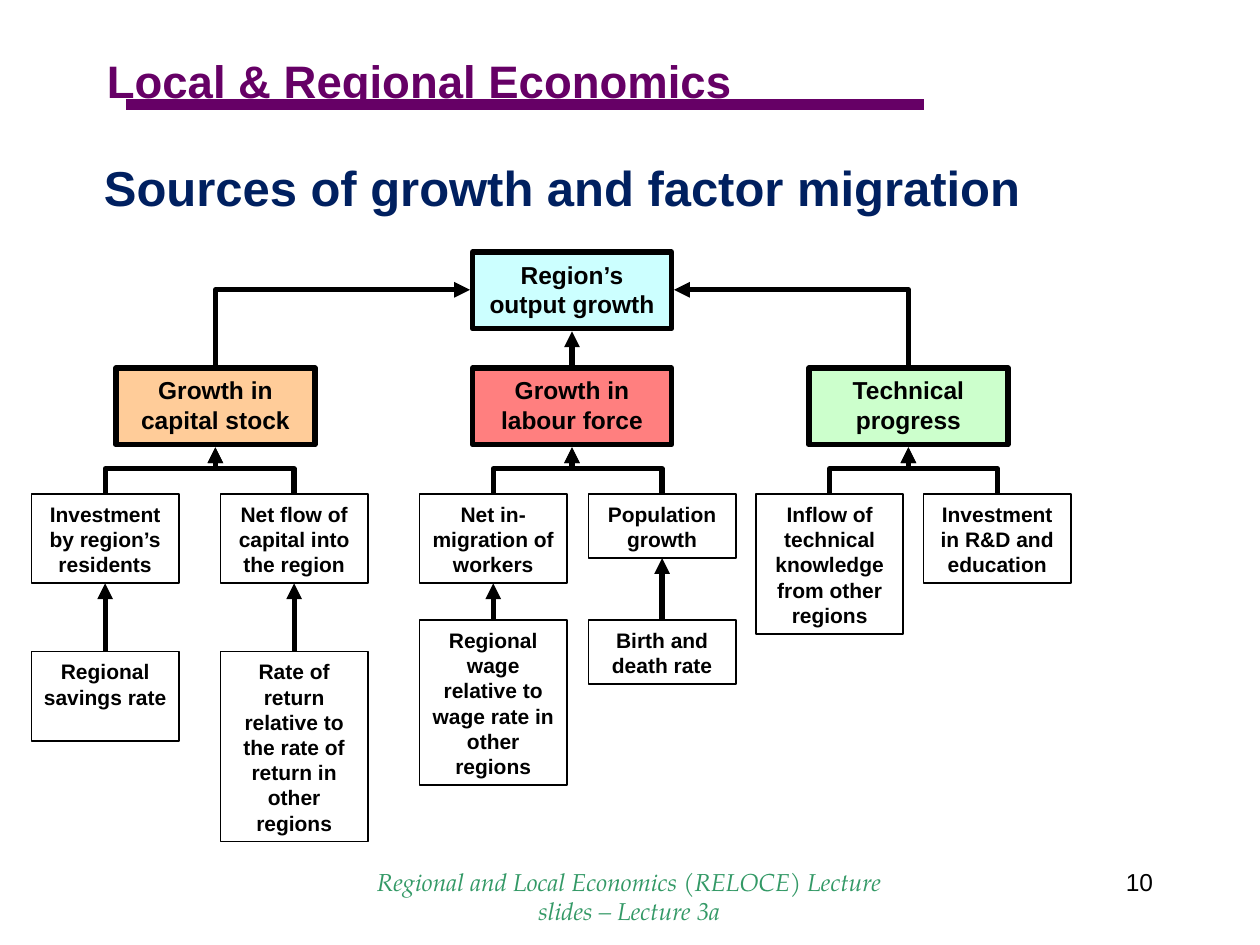
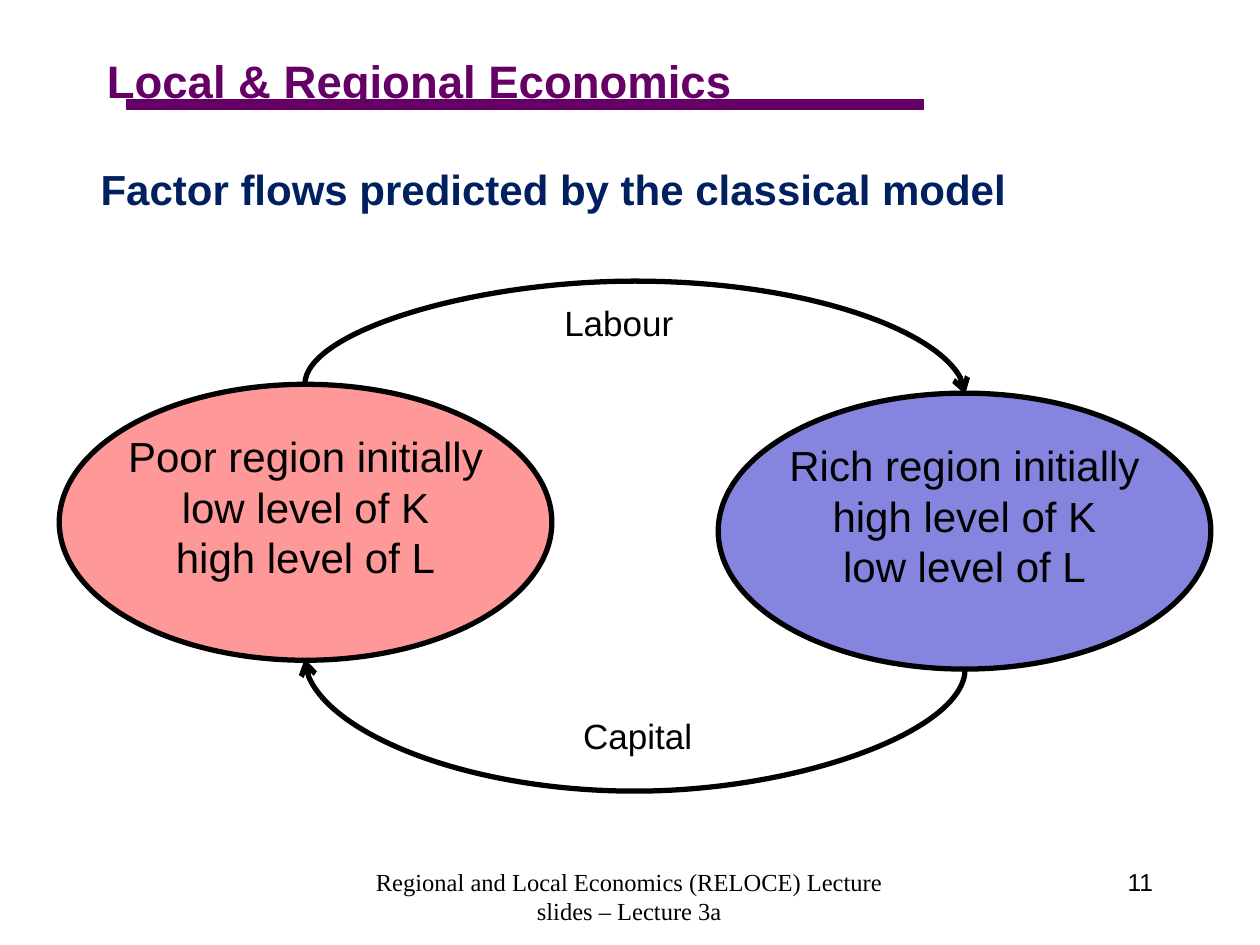
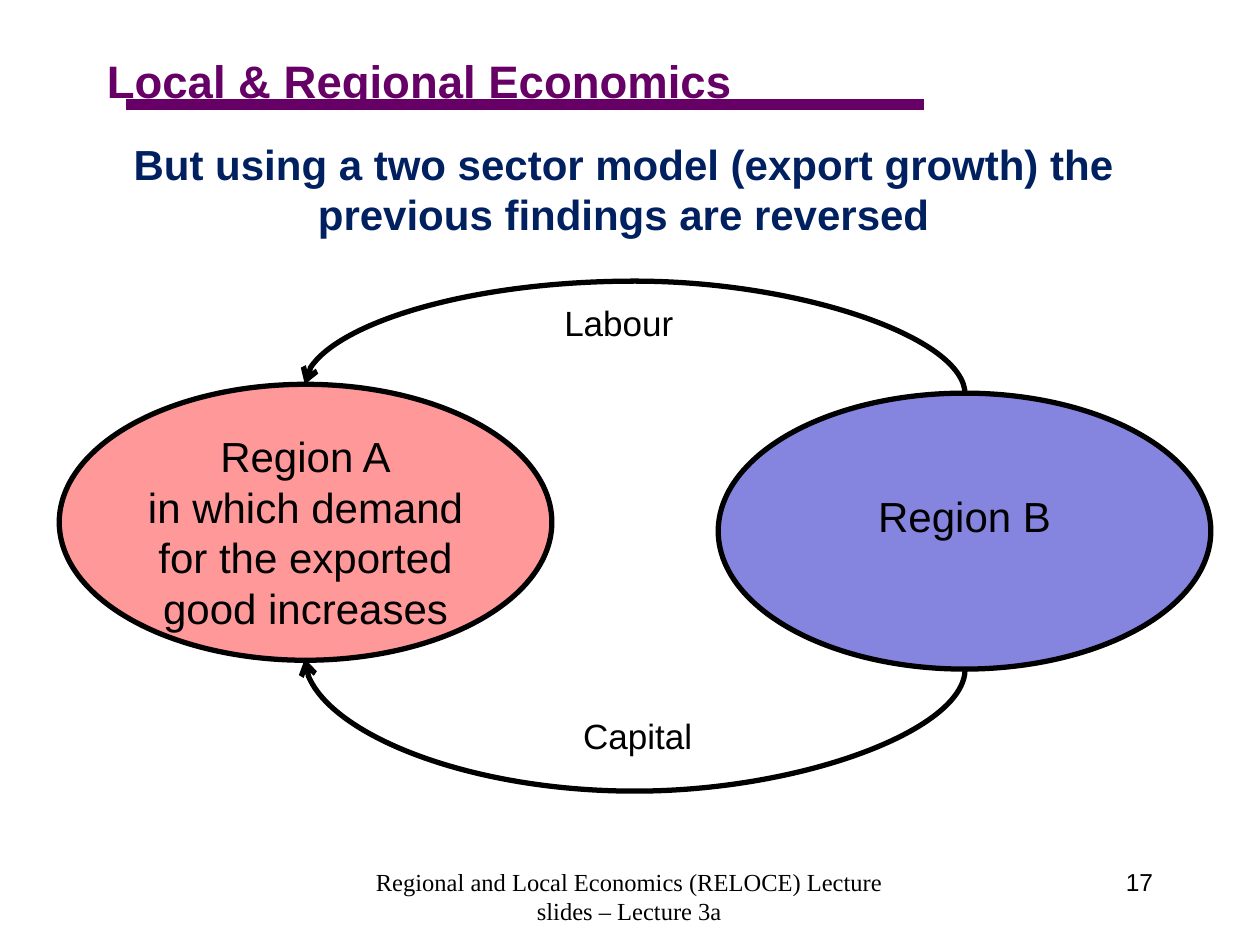
from dataclasses import dataclass

from lxml import etree
from pptx import Presentation
from pptx.dml.color import RGBColor
from pptx.enum import shapes, text
from pptx.oxml import ns
from pptx.util import Inches, Pt

SHAPE = shapes.MSO_SHAPE
CONNECTOR = shapes.MSO_CONNECTOR
ALIGN = text.PP_ALIGN
ANCHOR = text.MSO_ANCHOR


@dataclass(frozen=True)
class Theme:
    font: str = "Arial"
    ink: str = "000000"
    white: str = "FFFFFF"
    brand: str = "660066"
    title: str = "002060"
    output: str = "CCFFFF"
    capital: str = "FFCC99"
    labour: str = "FF0000"
    progress: str = "CCFFCC"
    left_region: str = "FF9999"
    right_region: str = "8585E0"
    footer_green: str = "339966"
    header_size: int = 26
    large_title_size: int = 28
    title_size: int = 24
    region_size: int = 24
    flow_size: int = 20
    factor_size: int = 14
    footer_size: int = 14
    cause_size: int = 12
    thin: int = 1
    thick: int = 3
    rule: int = 6


THEME = Theme()


def add_xml(parent, tag, **attributes):
    return etree.SubElement(parent, ns.qn(tag), attributes)


class Deck:
    def __init__(self, theme):
        self.theme = theme
        self.presentation = Presentation()
        self.presentation.slide_width = Inches(10)
        self.presentation.slide_height = Inches(7.5)
        self.slide = None

    def new_slide(self, number, footer_font=None, footer_color=None, italic=False):
        theme = self.theme
        self.slide = self.presentation.slides.add_slide(self.presentation.slide_layouts[6])
        self.text(0.75, 0.37, 6.67, 0.53, "Local & Regional Economics",
                  theme.header_size, theme.brand, bold=True)
        self.arrow((1, 0.83), (7.33, 0.83), theme.brand, theme.rule, end=None)
        self.text(2.83, 6.83, 4.33, 0.5,
                  "Regional and Local Economics (RELOCE) Lecture slides – Lecture 3a",
                  theme.footer_size, footer_color, ALIGN.CENTER,
                  font=footer_font, italic=italic)
        self.text(7.17, 6.83, 2.08, 0.5, str(number), theme.footer_size, align=ALIGN.RIGHT)

    def set_text(self, frame, wording, size, color=None, align=ALIGN.LEFT, bold=False,
                 italic=False, font=None, wrap=True, anchor=ANCHOR.TOP, top_inset=0.05):
        frame.word_wrap = wrap
        frame.vertical_anchor = anchor
        frame.margin_left = frame.margin_right = Inches(0.1)
        frame.margin_top, frame.margin_bottom = Inches(top_inset), Inches(0.05)
        frame.text = wording
        for paragraph in frame.paragraphs:
            paragraph.alignment = align
            for run in paragraph.runs:
                run.font.name = font or self.theme.font
                run.font.size = Pt(size)
                run.font.bold = bold
                run.font.italic = italic
                run.font.color.rgb = RGBColor.from_string(color or self.theme.ink)

    def text(self, left, top, width, height, wording, size, color=None,
             align=ALIGN.LEFT, **style):
        box = self.slide.shapes.add_textbox(*map(Inches, (left, top, width, height)))
        self.set_text(box.text_frame, wording, size, color, align, **style)

    def title(self, wording, align=ALIGN.LEFT):
        self.text(0.7, 1.17, 8.5, 0.65, wording, self.theme.title_size, self.theme.title,
                  align, bold=True, anchor=ANCHOR.MIDDLE)

    def node(self, kind, left, top, width, height, fill, line_width, wording, size,
             opacity=None, **style):
        shape = self.slide.shapes.add_shape(kind, *map(Inches, (left, top, width, height)))
        shape.shadow.inherit = False
        shape.fill.solid()
        shape.fill.fore_color.rgb = RGBColor.from_string(fill)
        if opacity is not None:
            color = shape._element.spPr.find(".//" + ns.qn("a:srgbClr"))
            add_xml(color, "a:alpha", val=str(opacity * 1000))
        shape.line.color.rgb = RGBColor.from_string(self.theme.ink)
        shape.line.width = Pt(line_width)
        self.set_text(shape.text_frame, wording, size, align=ALIGN.CENTER, **style)

    def box(self, left, top, width, height, fill, line_width, wording, size, opacity=None):
        self.node(SHAPE.RECTANGLE, left, top, width, height, fill, line_width, wording,
                  size, opacity, bold=True, top_inset=0.06)

    def finish_line(self, connector, color, width, end, head):
        connector.line.color.rgb = RGBColor.from_string(color)
        connector.line.width = Pt(width)
        properties = connector._element.spPr
        add_xml(properties, "a:effectLst")
        if end:
            add_xml(properties.find(ns.qn("a:ln")), "a:" + end, type=head)

    def arrow(self, start, finish, color=None, width=None, end="tailEnd"):
        connector = self.slide.shapes.add_connector(
            CONNECTOR.STRAIGHT, *map(Inches, (*start, *finish)))
        self.finish_line(connector, color or self.theme.ink, width or self.theme.thick,
                         end, "triangle")

    def bent_arrow(self, start, finish, bend=None, kind=CONNECTOR.ELBOW,
                   end="tailEnd", head="triangle"):
        """Leave start vertically; turn at height bend, or once only without it."""
        (x1, y1), (x2, y2) = start, finish
        dx, dy = x2 - x1, y2 - y1
        # The connector is laid out horizontally about its centre, then turned.
        left = (x1 + x2 - abs(dy)) / 2
        top = (y1 + y2 - abs(dx)) / 2
        connector = self.slide.shapes.add_connector(
            kind, *map(Inches, (left, top, left + abs(dy), top + abs(dx))))
        properties = connector._element.spPr
        frame = properties.find(ns.qn("a:xfrm"))
        frame.set("rot", str((270 if dx > 0 else 90) * 60000))
        if dx * dy > 0:
            frame.set("flipH", "1")
        geometry = properties.find(ns.qn("a:prstGeom"))
        if bend is None:
            geometry.set("prst", "bentConnector2")
        else:
            adjustments = geometry.find(ns.qn("a:avLst"))
            if adjustments is None:
                adjustments = add_xml(geometry, "a:avLst")
            add_xml(adjustments, "a:gd", name="adj1",
                    fmla=f"val {round((bend - y1) / dy * 100000)}")
        self.finish_line(connector, self.theme.ink, self.theme.thick, end, head)


def growth_sources(deck):
    theme = deck.theme
    deck.new_slide(10, "TeX Gyre Pagella", theme.footer_green, italic=True)
    deck.text(0.42, 1.2, 8.08, 0.58, "Sources of growth and factor migration",
              theme.large_title_size, theme.title, ALIGN.CENTER, bold=True)

    factor_width, factor_height, factor_top = 1.58, 0.61, 2.92
    cause_width, cause_top = 1.17, 3.92
    output_left, output_top = 3.75, 2

    def factor(left, top, fill, wording, opacity=None):
        deck.box(left, top, factor_width, factor_height, fill, theme.thick, wording,
                 theme.factor_size, opacity)

    def cause(left, top, line_count, wording):
        """Draw a box as high as its lines and return its bottom edge."""
        height = 0.11 + 0.2 * line_count
        deck.box(left, top, cause_width, height, theme.white, theme.thin, wording,
                 theme.cause_size)
        return top + height

    factor(output_left, output_top, theme.output, "Region’s output growth")

    # Each cause: left, lines, wording, then the top, lines and wording of its driver.
    branches = [
        (0.92, theme.capital, None, "Growth in capital stock", [
            (0.25, 3, "Investment by region’s residents",
             (5.17, 3, "Regional savings rate")),
            (1.75, 3, "Net flow of capital into the region",
             (5.17, 7, "Rate of return relative to the rate of return in other regions")),
        ]),
        (output_left, theme.labour, 50, "Growth in labour force", [
            (3.33, 3, "Net in-migration of workers",
             (4.92, 6, "Regional wage relative to wage rate in other regions")),
            (4.67, 2, "Population growth", (4.92, 2, "Birth and death rate")),
        ]),
        (6.42, theme.progress, None, "Technical progress", [
            (6, 5, "Inflow of technical knowledge from other regions", None),
            (7.33, 3, "Investment in R&D and education", None),
        ]),
    ]
    for left, fill, opacity, wording, causes in branches:
        factor(left, factor_top, fill, wording, opacity)
        center = left + factor_width / 2
        start = (center, factor_top - 0.02)
        if left == output_left:
            deck.arrow(start, (center, output_top + factor_height + 0.02))
        else:
            side = (output_left - 0.02 if left < output_left
                    else output_left + factor_width + 0.02)
            deck.bent_arrow(start, (side, output_top + 0.3))

        for cause_left, line_count, cause_wording, driver in causes:
            bottom = cause(cause_left, cause_top, line_count, cause_wording)
            middle = cause_left + cause_width / 2
            deck.bent_arrow((middle, cause_top),
                            (center, factor_top + factor_height + 0.02), bend=3.72)
            if driver:
                cause(cause_left, *driver)
                deck.arrow((middle, driver[0]), (middle, bottom))


def factor_flows(deck, number, title, title_align, left_region, right_region,
                 right_inset, labour_end):
    theme = deck.theme
    deck.new_slide(number, "Times New Roman")
    deck.title(title, title_align)

    def region(left, top, fill, wording, inset=0.05):
        deck.node(SHAPE.OVAL, left, top, 3.91, 2.19, fill, theme.thick, wording,
                  theme.region_size, wrap=False, top_inset=inset)

    region(5.7, 3.12, theme.right_region, right_region, right_inset)
    deck.bent_arrow((2.42, 3.05), (7.66, 3.13), 2.23, CONNECTOR.CURVE, labour_end, "arrow")
    deck.bent_arrow((7.66, 5.31), (2.42, 5.23), 6.28, CONNECTOR.CURVE, head="arrow")
    for left, top, flow in ((4.38, 2.34, "Labour"), (4.53, 5.62, "Capital")):
        deck.text(left, top, 1.08, 0.44, flow, theme.flow_size, wrap=False)
    region(0.47, 3.05, theme.left_region, left_region)


def main():
    deck = Deck(THEME)
    growth_sources(deck)
    factor_flows(deck, 11, "Factor flows predicted by the classical model", ALIGN.LEFT,
                 "Poor region initially\nlow level of K\nhigh level of L",
                 "Rich region initially\nhigh level of K\nlow level of L",
                 right_inset=0.05, labour_end="tailEnd")
    factor_flows(deck, 17,
                 "But using a two sector model (export growth) the previous findings are reversed",
                 ALIGN.CENTER,
                 "Region A\nin which demand\nfor the exported\ngood increases",
                 "Region B", right_inset=0.45, labour_end="headEnd")
    deck.presentation.save("out.pptx")


if __name__ == "__main__":
    main()
